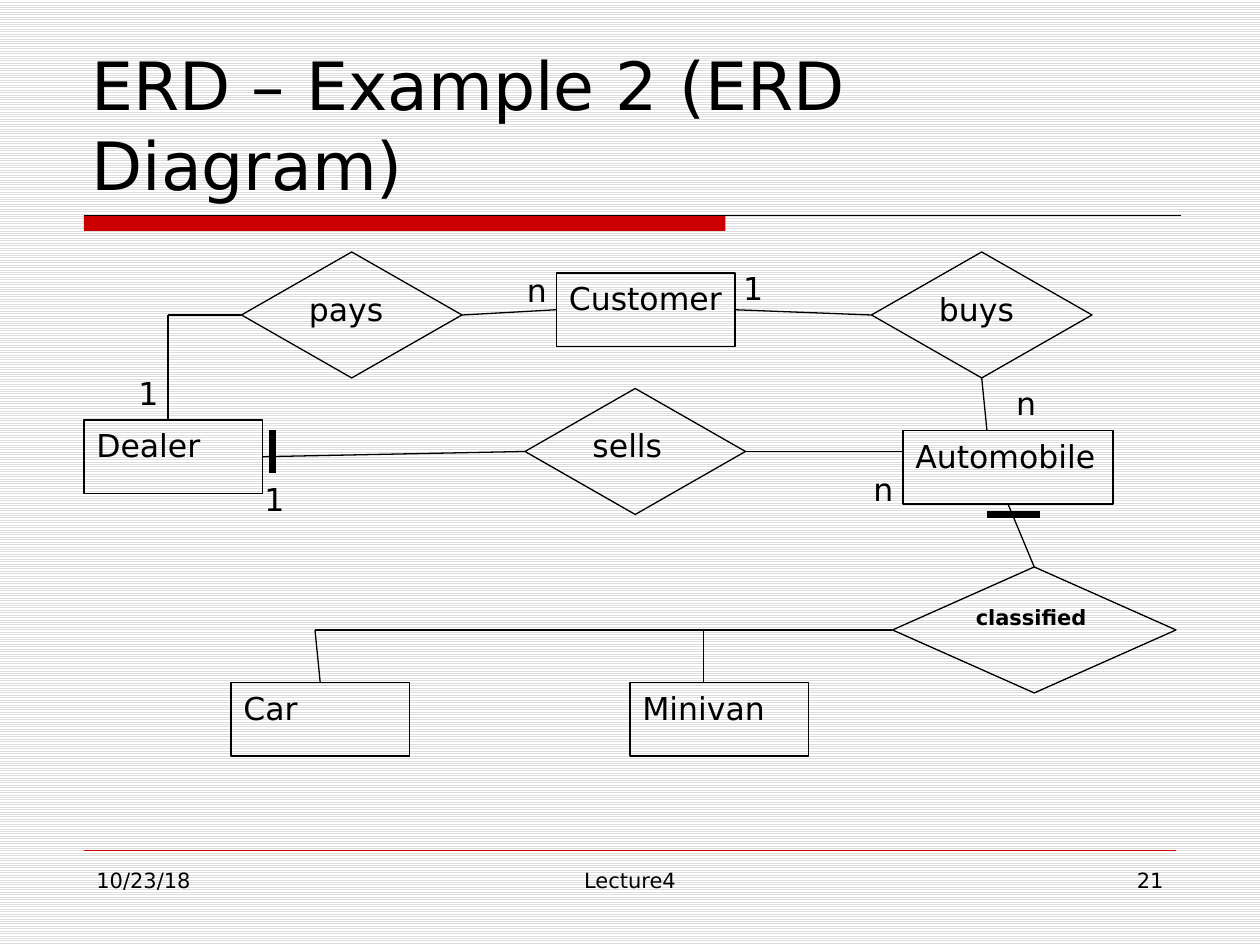
from lxml import etree
from pptx import Presentation, util as u
from pptx.dml.color import RGBColor
from pptx.enum import dml, shapes, text
from pptx.oxml.ns import qn

prs = Presentation()
prs.slide_width, prs.slide_height = u.Inches(10), u.Inches(7.5)
s = prs.slides.add_slide(prs.slide_layouts[5])
G = prs.slide_width / 120


def style(sp, txt, size=18, align="LEFT", anchor="TOP", bold=False, wrap=True):
    tf = sp.text_frame
    tf.text = txt
    tf.word_wrap = wrap
    tf.auto_size = text.MSO_AUTO_SIZE.NONE if wrap else text.MSO_AUTO_SIZE.SHAPE_TO_FIT_TEXT
    tf.vertical_anchor = text.MSO_ANCHOR[anchor]
    p = tf.paragraphs[0]
    p.alignment = text.PP_ALIGN[align]
    f = p.runs[0].font
    f.name, f.size, f.bold = "DejaVu Sans", u.Pt(size), bold
    f.color.rgb = RGBColor.from_string("000000")


def line(x1, y1, x2, y2, color="000000", width=0.75):
    c = s.shapes.add_connector(shapes.MSO_CONNECTOR.STRAIGHT, *(int(v * G) for v in (x1, y1, x2, y2)))
    c.line.color.rgb = RGBColor.from_string(color)
    c.line.width = u.Pt(width)
    etree.SubElement(c._element.spPr, qn("a:effectLst"))


bg = s.background.fill
bg.patterned()
bg.pattern = dml.MSO_PATTERN.LIGHT_HORIZONTAL
bg.fore_color.rgb = RGBColor.from_string("DDDDDD")
bg.back_color.rgb = RGBColor.from_string("FFFFFF")

bar = s.shapes.add_shape(shapes.MSO_SHAPE.RECTANGLE, *(int(v * G) for v in (8, 20.5, 61.1, 1.5)))
bar.shadow.inherit = False
bar.fill.solid()
bar.fill.fore_color.rgb = RGBColor.from_string("CC0000")
bar.line.fill.background()
line(8, 20.5, 112.5, 20.5, width=0.5)
line(8, 81, 112, 81, "CC0000", 0.25)

title = s.shapes.title
title.left, title.top, title.width, title.height = (int(v * G) for v in (7.5, 4, 105, 16))
style(title, "ERD – Example 2 (ERD Diagram)", 38, anchor="BOTTOM")

for txt, x, w, align in [("10/23/18", 8, 26, "LEFT"), ("Lecture4", 41, 38, "CENTER"), ("21", 86, 26, "RIGHT")]:
    sp = s.shapes.add_textbox(*(int(v * G) for v in (x, 82, w, 6.25)))
    style(sp, txt, 12, align)

nodes = [
    ("Dealer", "RECTANGLE", 8, 40, 17, 7),
    ("Customer", "RECTANGLE", 53, 26, 17, 7),
    ("Automobile", "RECTANGLE", 86, 41, 20, 7),
    ("Car", "RECTANGLE", 22, 65, 17, 7),
    ("Minivan", "RECTANGLE", 60, 65, 17, 7),
    ("pays", "DIAMOND", 23, 24, 21, 12),
    ("sells", "DIAMOND", 50, 37, 21, 12),
    ("buys", "DIAMOND", 83, 24, 21, 12),
    ("classified", "DIAMOND", 85, 54, 27, 12),
]
for txt, kind, *box in nodes:
    sp = s.shapes.add_shape(shapes.MSO_SHAPE[kind], *(int(v * G) for v in box))
    sp.shadow.inherit = False
    sp.fill.background()
    sp.line.color.rgb = RGBColor.from_string("000000")
    sp.line.width = u.Pt(0.75)
    small = txt == "classified"
    style(sp, txt, 12 if small else 18, bold=small)

for ends in [
    (23, 30, 16, 30), (16, 30, 16, 40), (44, 30, 53, 29.5), (70, 29.5, 83, 30),
    (25, 43.5, 50, 43), (71, 43, 86, 43), (93.5, 36, 94, 41), (96, 48, 98.5, 54),
    (85, 60, 30, 60), (67, 60, 67, 65), (30, 60, 30.5, 65),
]:
    line(*ends)
line(26, 41, 26, 45, width=4)
line(94, 49, 99, 49, width=4)

for txt, x, y in [("1", 12, 35), ("n", 49, 25.2), ("1", 69.6, 25),
                  ("n", 95.6, 36), ("1", 24, 45.1), ("n", 82, 44.2)]:
    sp = s.shapes.add_textbox(*(int(v * G) for v in (x, y, 4.3, 4.8)))
    style(sp, txt, wrap=False)

prs.save("out.pptx")
